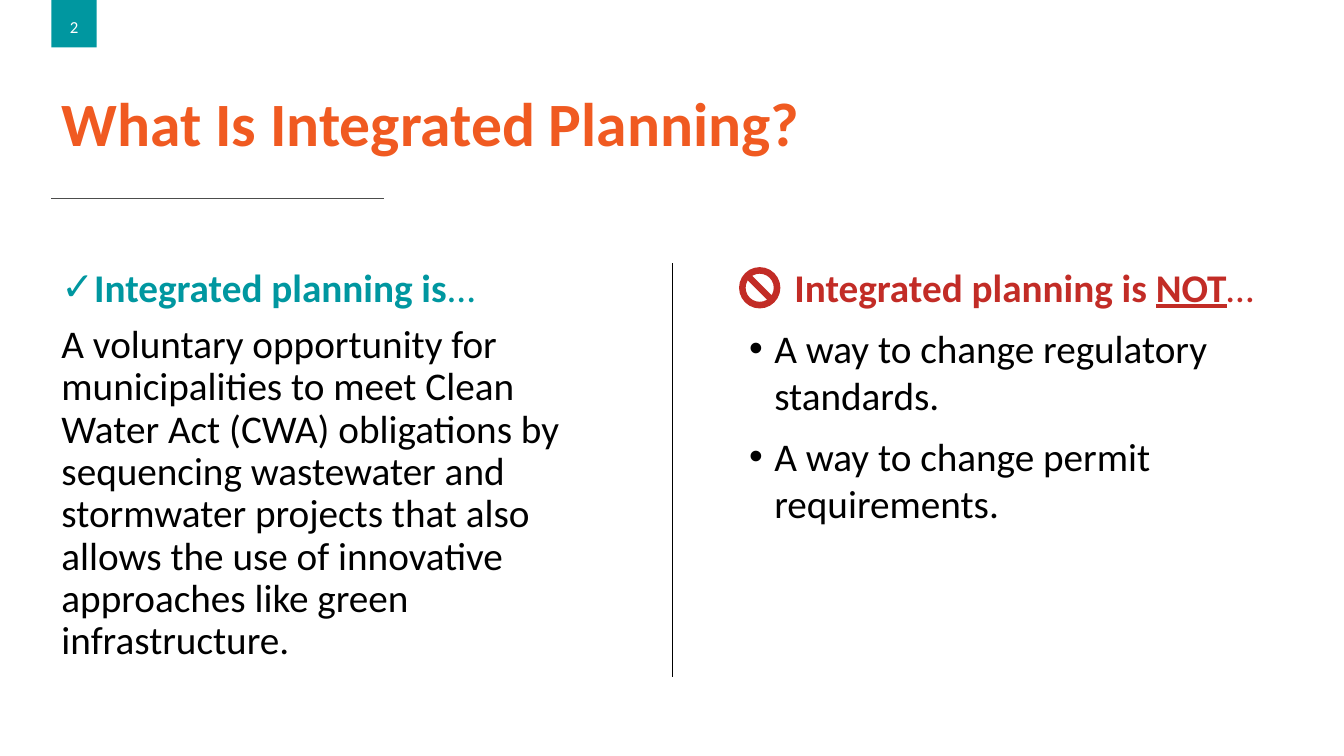
from lxml.etree import SubElement
from pptx import Presentation
from pptx.dml.color import RGBColor
from pptx.enum.shapes import MSO_CONNECTOR, MSO_SHAPE
from pptx.enum.text import MSO_ANCHOR, MSO_AUTO_SIZE, PP_ALIGN
from pptx.oxml.ns import qn
from pptx.util import Inches, Pt

TEAL, ORANGE, RED = "0097A0", "F05A21", "C22C26"
BLACK, WHITE, GRAY = "000000", "FFFFFF", "4C4D4C"


def color(hex_string):
    return RGBColor.from_string(hex_string)


class SlideBuilder:
    font_name = "Calibri"
    body_size = 28

    def __init__(self, slide):
        self.slide = slide

    def place(self, shape, left, top, width, height):
        shape.left, shape.top = Inches(left), Inches(top)
        shape.width, shape.height = Inches(width), Inches(height)

    def run(self, paragraph, text, size, hex_string, bold=False, underline=False):
        run = paragraph.add_run()
        run.text = text
        run.font.name = self.font_name
        run.font.size = Pt(size)
        run.font.bold = bold
        run.font.underline = underline
        run.font.color.rgb = color(hex_string)

    def frame(self, shape, anchor):
        frame = shape.text_frame
        frame.word_wrap = True
        frame.auto_size = MSO_AUTO_SIZE.NONE
        frame.vertical_anchor = anchor
        return frame

    def title(self, text, *box):
        shape = self.slide.shapes.title
        self.place(shape, *box)
        paragraph = self.frame(shape, MSO_ANCHOR.MIDDLE).paragraphs[0]
        paragraph.alignment = PP_ALIGN.LEFT
        paragraph.line_spacing = 0.9
        self.run(paragraph, text, 44, ORANGE, bold=True)

    def body(self, index, box, paragraphs):
        """Fill a body placeholder with (runs, bullet, first indent, line spacing) items."""
        shape = self.slide.placeholders[index]
        self.place(shape, *box)
        frame = self.frame(shape, MSO_ANCHOR.TOP)
        for number, (runs, bullet, indent, spacing) in enumerate(paragraphs):
            paragraph = frame.add_paragraph() if number else frame.paragraphs[0]
            paragraph.line_spacing = spacing
            paragraph.space_before = Pt(10)
            self.bullet(paragraph, bullet, indent)
            for text, *style in runs:
                self.run(paragraph, text, self.body_size, *style)

    def bullet(self, paragraph, character, indent):
        properties = paragraph._p.get_or_add_pPr()
        properties.set("marL", str(Inches(0.25 if character else 0)))
        properties.set("indent", str(Inches(indent)))
        if character:
            SubElement(properties, qn("a:buFont")).set("typeface", "Arial")
            SubElement(properties, qn("a:buChar")).set("char", character)
        else:
            SubElement(properties, qn("a:buNone"))

    def shape(self, kind, box, hex_string):
        shape = self.slide.shapes.add_shape(kind, *map(Inches, box))
        shape.shadow.inherit = False
        shape.fill.solid()
        shape.fill.fore_color.rgb = color(hex_string)
        shape.line.fill.background()
        return shape

    def label(self, text, *box):
        shape = self.slide.shapes.add_textbox(*map(Inches, box))
        paragraph = self.frame(shape, MSO_ANCHOR.MIDDLE).paragraphs[0]
        paragraph.alignment = PP_ALIGN.CENTER
        self.run(paragraph, text, 12, WHITE)

    def line(self, hex_string, *ends):
        line = self.slide.shapes.add_connector(MSO_CONNECTOR.STRAIGHT, *map(Inches, ends))
        line.line.color.rgb = color(hex_string)
        line.line.width = Pt(0.5)
        SubElement(line._element.spPr, qn("a:effectLst"))


def main():
    presentation = Presentation()
    presentation.slide_width, presentation.slide_height = Inches(13.33), Inches(7.5)
    builder = SlideBuilder(presentation.slides.add_slide(presentation.slide_layouts[3]))

    builder.shape(MSO_SHAPE.RECTANGLE, (0.51, 0, 0.45, 0.47), TEAL)
    builder.label("2", 0.51, 0.07, 0.45, 0.4)
    builder.title("What Is Integrated Planning?", 0.51, 0.74, 12.38, 1.04)
    builder.line(GRAY, 0.51, 1.97, 3.81, 1.97)

    definition = (
        "A voluntary opportunity for municipalities to meet Clean Water Act (CWA) "
        "obligations by sequencing wastewater and stormwater projects that also allows "
        "the use of innovative approaches like green infrastructure."
    )
    builder.body(1, (0.51, 2.61, 5.4, 4.45), [
        ([("Integrated planning is", TEAL, True), ("...", TEAL)], "✓", -0.25, 0.9),
        ([(definition, BLACK)], None, 0, 0.9),
    ])

    not_heading = [("Integrated planning is ", RED, True), ("NOT", RED, True, True), ("…", RED)]
    misconceptions = [
        "A way to change regulatory standards.",
        "A way to change permit requirements.",
    ]
    builder.body(2, (7.33, 2.61, 5.73, 3.58), [
        (not_heading, None, 0.45, 0.9),
        *[([(text, BLACK)], "•", -0.25, 1.0) for text in misconceptions],
    ])

    builder.line(BLACK, 6.67, 2.61, 6.67, 6.72)
    prohibition = builder.shape(MSO_SHAPE.NO_SYMBOL, (7.33, 2.65, 0.41, 0.41), RED)
    prohibition.adjustments[0] = 0.16

    presentation.save("out.pptx")


if __name__ == "__main__":
    main()
